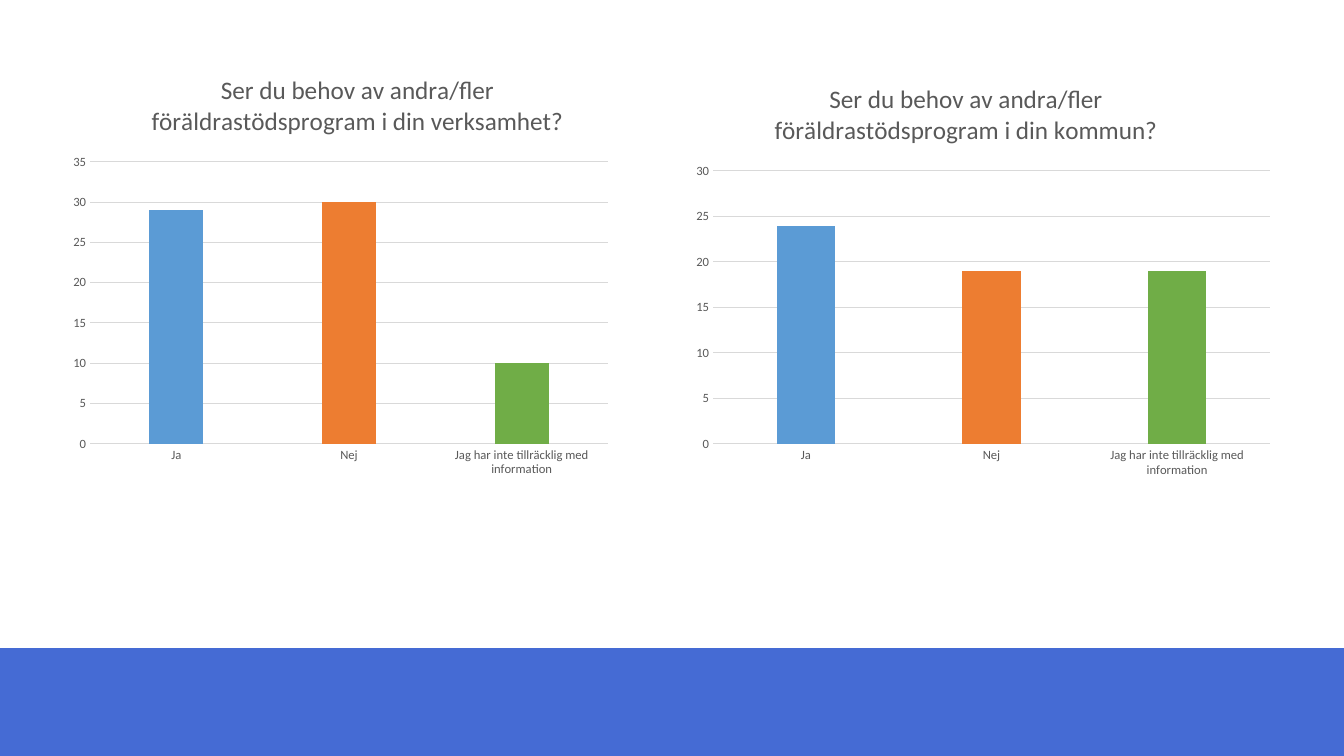
"""Build a slide with two survey column charts above a blue band."""
from dataclasses import dataclass

from lxml.etree import SubElement
from pptx import Presentation
from pptx.chart.data import CategoryChartData as ChartData
from pptx.dml.color import RGBColor
from pptx.enum.chart import XL_CHART_TYPE as ChartType, XL_TICK_MARK as TickMark
from pptx.enum.shapes import MSO_SHAPE as Preset
from pptx.oxml.ns import qn
from pptx.util import Emu, Pt

PX = 914400 / 100.8
WIDTH, HEIGHT = 1344, 756
FONT = "Calibri"
COLORS = {
    "band": "456BD4",
    "text": "595959",
    "base": "000000",
    "grid": "D9D9D9",
    "yes": "5B9BD5",
    "no": "ED7D31",
    "unsure": "70AD47",
}
ANSWERS = {
    "Ja": "yes",
    "Nej": "no",
    "Jag har inte tillräcklig med information": "unsure",
}


@dataclass(frozen=True)
class Box:
    left: int
    top: int
    width: int
    height: int


@dataclass(frozen=True)
class Survey:
    question: str
    votes: tuple[int, ...]
    axis_top: int
    frame: Box
    plot: Box
    title_left: int
    title_top: int


SURVEYS = (
    Survey("Ser du behov av andra/fler föräldrastödsprogram i din verksamhet?",
           (29, 30, 10), 35, Box(62, 62, 557, 424), Box(90, 162, 518, 282), 147, 68),
    Survey("Ser du behov av andra/fler föräldrastödsprogram i din kommun?",
           (24, 19, 19), 30, Box(684, 71, 598, 415), Box(713, 171, 557, 273), 770, 77),
)


def px(value: int) -> Emu:
    return Emu(round(value * PX))


def extent(box: Box) -> tuple[Emu, ...]:
    return px(box.left), px(box.top), px(box.width), px(box.height)


def color(name: str) -> RGBColor:
    return RGBColor.from_string(COLORS[name])


def style_font(font, *, size: int, shade: str) -> None:
    font.name = FONT
    font.size = Pt(size)
    font.bold = False
    font.color.rgb = color(shade)


def write_text(frame, text: str, *, size: int, shade: str) -> None:
    para = frame.paragraphs[0]
    span = para.add_run()
    span.text = text
    style_font(para.font, size=size, shade=shade)
    style_font(span.font, size=size, shade=shade)


def style_line(line) -> None:
    line.color.rgb = color("grid")
    line.width = Pt(0.75)


def place(layout, settings: dict[str, str | float]) -> None:
    for child in list(layout):
        layout.remove(child)
    manual = SubElement(layout, qn("c:manualLayout"))
    for tag, value in settings.items():
        SubElement(manual, qn(f"c:{tag}")).set("val", str(value))


def fractions(survey: Survey, left: int, top: int) -> dict[str, str | float]:
    frame = survey.frame
    return {"xMode": "edge", "yMode": "edge",
            "x": round((left - frame.left) / frame.width, 4),
            "y": round((top - frame.top) / frame.height, 4)}


def layout_of(parent, position: int):
    layout = parent.find(qn("c:layout"))
    if layout is None:
        layout = SubElement(parent, qn("c:layout"))
        parent.insert(position, layout)
    return layout


def add_survey(page, survey: Survey) -> None:
    data = ChartData()
    data.categories = list(ANSWERS)
    data.add_series("Series 1", survey.votes)
    chart = page.shapes.add_chart(
        ChartType.COLUMN_CLUSTERED, *extent(survey.frame), data).chart
    style_font(chart.font, size=10, shade="base")
    chart.has_legend = False

    chart.has_title = True
    title = chart.chart_title
    write_text(title.text_frame, survey.question, size=18, shade="text")
    place(layout_of(title._element, 1),
          fractions(survey, survey.title_left, survey.title_top))

    bars = chart.plots[0]
    bars.gap_width, bars.overlap = 219, -27
    bars.vary_by_categories = False
    series = bars.series[0]
    series.format.fill.solid()
    series.format.fill.fore_color.rgb = color("yes")
    for index, shade in enumerate(ANSWERS.values()):
        fill = series.points[index].format.fill
        fill.solid()
        fill.fore_color.rgb = color(shade)

    categories, values = chart.category_axis, chart.value_axis
    for axis in (categories, values):
        axis.major_tick_mark = axis.minor_tick_mark = TickMark.NONE
        style_font(axis.tick_labels.font, size=9, shade="text")
    style_line(categories.format.line)
    values.format.line.fill.background()
    values.has_major_gridlines = True
    style_line(values.major_gridlines.format.line)
    values.minimum_scale, values.maximum_scale = 0, survey.axis_top
    values.major_unit = 5

    plot_area = chart._chartSpace.chart.plotArea
    place(layout_of(plot_area, 0), {
        "layoutTarget": "inner",
        **fractions(survey, survey.plot.left, survey.plot.top),
        "w": round(survey.plot.width / survey.frame.width, 4),
        "h": round(survey.plot.height / survey.frame.height, 4),
    })


def add_band(page, box: Box) -> None:
    band = page.shapes.add_shape(Preset.RECTANGLE, *extent(box))
    band.shadow.inherit = False
    band.fill.solid()
    band.fill.fore_color.rgb = color("band")
    band.line.fill.background()


def main() -> None:
    deck = Presentation()
    deck.slide_width, deck.slide_height = px(WIDTH), px(HEIGHT)
    page = deck.slides.add_slide(deck.slide_layouts[6])
    add_band(page, Box(0, 648, WIDTH, HEIGHT - 648))
    for survey in SURVEYS:
        add_survey(page, survey)
    deck.save("out.pptx")


if __name__ == "__main__":
    main()
